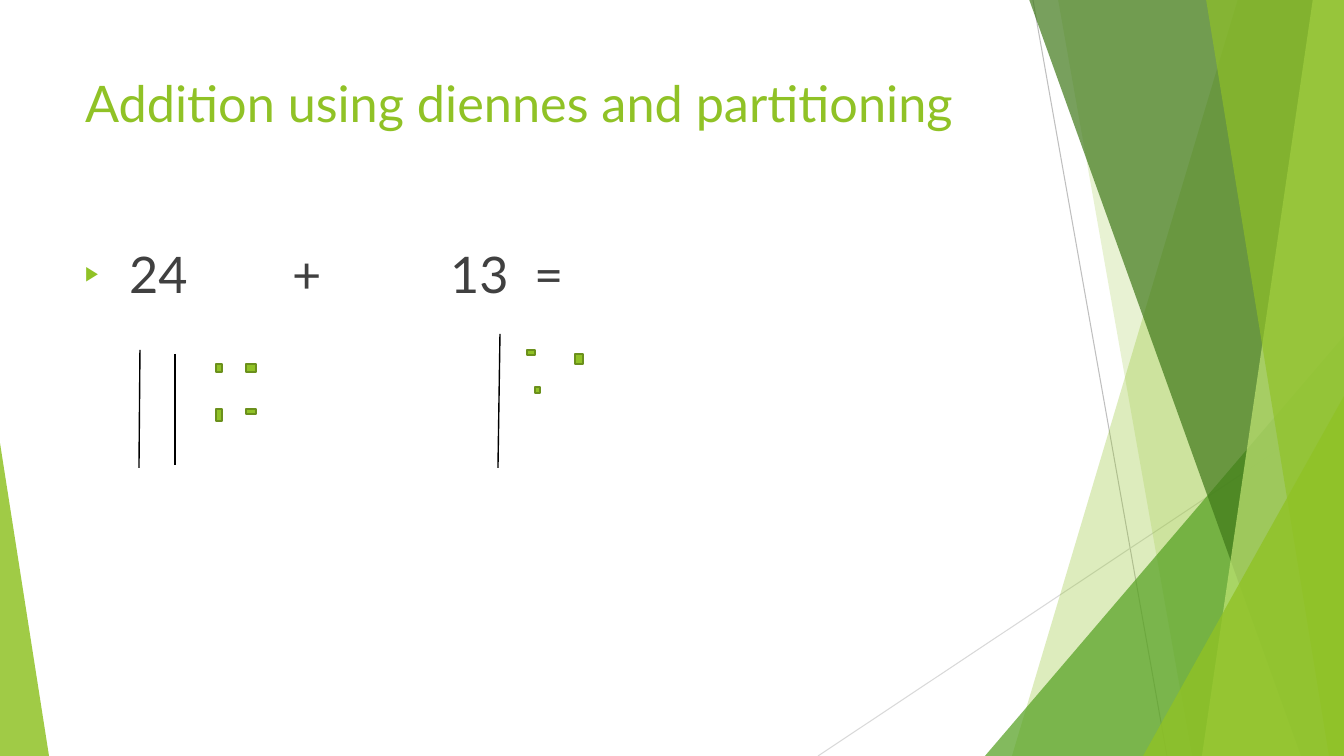
import lxml.etree
import pptx
import pptx.dml.color
import pptx.enum.shapes
import pptx.enum.text
import pptx.oxml.ns
import pptx.util

PX = 914400 / 100.8
WIDTH, HEIGHT = 1344, 756
RGB = pptx.dml.color.RGBColor
LIME = RGB(0x90, 0xC2, 0x26)
PALE_LIME = RGB(0xC0, 0xE4, 0x74)
GREEN = RGB(0x54, 0xA0, 0x21)
FOREST = RGB(0x3F, 0x78, 0x19)
OLIVE = RGB(0x6B, 0x90, 0x1C)
CHARCOAL = RGB(0x40, 0x40, 0x40)
BLACK = RGB(0, 0, 0)
SILVER = RGB(0xBF, 0xBF, 0xBF)
MIST = RGB(0xD9, 0xD9, 0xD9)
AUTO = pptx.enum.shapes.MSO_SHAPE


def px(length):
    return round(length * PX)


def child(parent, tag, **attributes):
    return lxml.etree.SubElement(parent, pptx.oxml.ns.qn(tag), attributes)


def paint(shape, color, opacity=100, outline=None):
    shape.shadow.inherit = False
    shape.fill.solid()
    shape.fill.fore_color.rgb = color
    if opacity < 100:
        tint = shape.fill._xPr.find(".//" + pptx.oxml.ns.qn("a:srgbClr"))
        child(tint, "a:alpha", val=str(opacity * 1000))
    if outline is None:
        shape.line.fill.background()
    else:
        shape.line.color.rgb = outline
        shape.line.width = pptx.util.Pt(1.5)


def add_line(slide, start, end, color, width):
    line = slide.shapes.add_connector(
        pptx.enum.shapes.MSO_CONNECTOR.STRAIGHT, *map(px, start + end))
    line.line.color.rgb = color
    line.line.width = pptx.util.Pt(width)
    child(line._element.spPr, "a:effectLst")


def add_band(slide, top_x, bottom_x, color, opacity):
    corners = [(top_x, -1), (WIDTH, -1), (WIDTH, HEIGHT), (bottom_x, HEIGHT)]
    points = [(px(x), px(y)) for x, y in corners]
    builder = slide.shapes.build_freeform(*points[0], scale=1.0)
    builder.add_line_segments(points[1:], close=True)
    paint(builder.convert_to_shape(), color, opacity)


def add_wedge(slide, left, top, width, apex, color, opacity):
    wedge = slide.shapes.add_shape(
        AUTO.ISOSCELES_TRIANGLE, px(left), px(top), px(width), px(HEIGHT - top))
    wedge.adjustments[0] = apex
    paint(wedge, color, opacity)


def write(placeholder, text, box, size, color, font="Lato"):
    placeholder.left, placeholder.top, placeholder.width, placeholder.height = map(px, box)
    frame = placeholder.text_frame
    frame.word_wrap = True
    frame.auto_size = pptx.enum.text.MSO_AUTO_SIZE.NONE
    frame.vertical_anchor = pptx.enum.text.MSO_ANCHOR.TOP
    paragraph = frame.paragraphs[0]
    paragraph.alignment = pptx.enum.text.PP_ALIGN.LEFT
    run = paragraph.add_run()
    run.text = text
    run.font.name = font
    run.font.size = pptx.util.Pt(size)
    run.font.color.rgb = color
    placeholder.element.getparent().append(placeholder.element)
    return paragraph


def draw_facets(slide):
    add_line(slide, (1033, 0), (1167, HEIGHT), SILVER, 0.75)
    add_line(slide, (WIDTH, 406), (818, HEIGHT), MIST, 0.75)
    add_band(slide, 1238, 1012, LIME, 30)
    add_band(slide, 1058, 1192, LIME, 20)
    add_wedge(slide, 985, 336, 359, 1, GREEN, 72)
    add_band(slide, 1029, 1301, FOREST, 70)
    add_band(slide, 1313, 1202, PALE_LIME, 70)
    add_band(slide, 1206, 1329, LIME, 65)
    add_wedge(slide, 1143, 396, 201, 1, LIME, 80)
    add_wedge(slide, 0, 443, 49, 0, LIME, 85)


def write_title(slide, box):
    write(slide.shapes.title, "Addition using diennes and partitioning", box, 36, LIME)


def write_sum(slide, box):
    addition = write(slide.placeholders[1], "24\t+\t13\t=", box, 36, CHARCOAL)
    addition.space_before = pptx.util.Pt(10)
    layout = addition._p.get_or_add_pPr()
    indent = px(44)
    layout.set("marL", str(indent))
    layout.set("indent", str(-indent))
    child(child(layout, "a:buClr"), "a:srgbClr", val=str(LIME))
    child(layout, "a:buSzPct", val="40000")
    child(layout, "a:buChar", char="▶")
    stops = child(layout, "a:tabLst")
    for stop in (207, 365, 449):
        child(stops, "a:tab", pos=str(px(stop)), algn="l")


def draw_diennes(slide, box, tens, ones):
    left, top = box
    for x1, y1, x2, y2 in tens:
        add_line(slide, (left + x1, top + y1), (left + x2, top + y2), BLACK, 1)
    for x, y, width, height in ones:
        cube = slide.shapes.add_shape(
            AUTO.RECTANGLE, px(left + x), px(top + y), px(width), px(height))
        paint(cube, LIME, outline=OLIVE)


def main():
    deck = pptx.Presentation()
    deck.slide_width, deck.slide_height = px(WIDTH), px(HEIGHT)
    slide = deck.slides.add_slide(deck.slide_layouts[1])
    draw_facets(slide)
    write_title(slide, (75, 67, 948, 145))
    write_sum(slide, (75, 238, 948, 427))
    draw_diennes(
        slide, (139, 350),
        tens=[(1, 0, 0, 118), (36, 4, 36, 115)],
        ones=[(77, 14, 6, 8), (107, 14, 10, 8), (77, 59, 6, 12), (107, 59, 10, 5)])
    draw_diennes(
        slide, (498, 334),
        tens=[(2, 0, 0, 134)],
        ones=[(29, 16, 8, 5), (77, 20, 8, 10), (37, 53, 5, 6)])
    deck.save("out.pptx")


if __name__ == "__main__":
    main()
